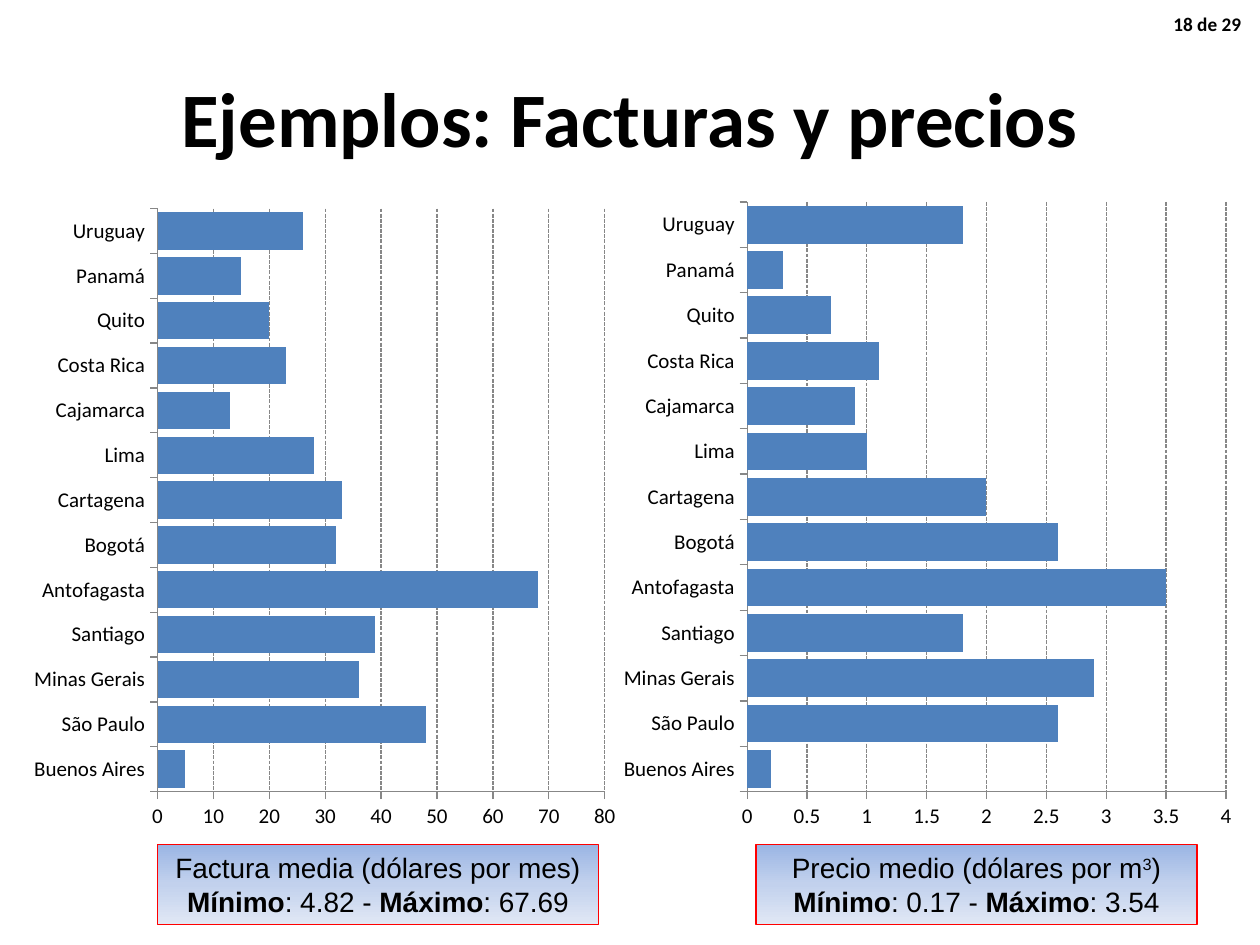
"""Build the slide that compares water bills and prices across Latin America."""
import copy

import pptx
import pptx.chart.data
import pptx.dml.color
import pptx.enum.chart
import pptx.enum.dml
import pptx.enum.shapes
import pptx.enum.text
import pptx.oxml
import pptx.oxml.ns
import pptx.util

Pt = pptx.util.Pt
RGBColor = pptx.dml.color.RGBColor
Align = pptx.enum.text.PP_ALIGN
Anchor = pptx.enum.text.MSO_ANCHOR

BLACK = RGBColor(0x00, 0x00, 0x00)
RED = RGBColor(0xFF, 0x00, 0x00)
BLUE = RGBColor(0x4F, 0x81, 0xBD)
GRAY = RGBColor(0x87, 0x87, 0x87)
GRADIENT = [
    (0, RGBColor(0x9A, 0xB5, 0xE4)),
    (0.5, RGBColor(0xC2, 0xD1, 0xED)),
    (1, RGBColor(0xE1, 0xE8, 0xF5)),
]

PLACES = ["Buenos Aires", "São Paulo", "Minas Gerais", "Santiago", "Antofagasta",
          "Bogotá", "Cartagena", "Lima", "Cajamarca", "Costa Rica", "Quito",
          "Panamá", "Uruguay"]
BILLS = [5, 48, 36, 39, 68, 32, 33, 28, 13, 23, 20, 15, 26]
PRICES = [0.2, 2.6, 2.9, 1.8, 3.5, 2.6, 2, 1, 0.9, 1.1, 0.7, 0.3, 1.8]

BOLD = {"bold": True}


class SlideBuilder:
    """Holds the style and the current slide."""

    def __init__(self, deck):
        self.page = deck.slides.add_slide(deck.slide_layouts[6])
        self.label_font = {"name": "Calibri", "size": Pt(12)}

    def apply(self, target, values):
        for name, value in values.items():
            setattr(target, name, value)

    def fill_text(self, shape, paragraphs, align, font, frame_format):
        frame = shape.text_frame
        self.apply(frame, {"word_wrap": True, **frame_format})
        for index, spans in enumerate(paragraphs):
            para = frame.paragraphs[0] if index == 0 else frame.add_paragraph()
            para.alignment = align
            for text, extra in spans:
                span = para.add_run()
                span.text = text
                span.font.color.rgb = BLACK
                values = {**font, **extra}
                baseline = values.pop("baseline", None)
                self.apply(span.font, values)
                if baseline:
                    span._r.get_or_add_rPr().set("baseline", baseline)

    def text(self, area, text, align, font, **frame_format):
        box = self.page.shapes.add_textbox(*map(Pt, area))
        self.fill_text(box, [[(text, {})]], align, font, frame_format)

    def caption(self, area, paragraphs):
        box = self.page.shapes.add_shape(
            pptx.enum.shapes.MSO_SHAPE.RECTANGLE, *map(Pt, area))
        box.shadow.inherit = False
        box.line.color.rgb = RED
        box.line.width = Pt(0.75)
        box.fill.gradient()
        box.fill.gradient_angle = 270
        stops = box._element.spPr.find(".//" + pptx.oxml.ns.qn("a:gsLst"))
        stops.append(copy.deepcopy(stops[0]))
        for stop, (position, color) in zip(box.fill.gradient_stops, GRADIENT):
            stop.position = position
            stop.color.rgb = color
        self.fill_text(box, paragraphs, Align.CENTER,
                       {"name": "Arial", "size": Pt(16)},
                       {"vertical_anchor": Anchor.MIDDLE,
                        "auto_size": pptx.enum.text.MSO_AUTO_SIZE.SHAPE_TO_FIT_TEXT})

    def bars(self, area, values, maximum, step, plot):
        data = pptx.chart.data.CategoryChartData()
        data.categories = PLACES
        data.add_series("Series 1", values)
        chart = self.page.shapes.add_chart(
            pptx.enum.chart.XL_CHART_TYPE.BAR_CLUSTERED, *map(Pt, area), data).chart
        self.apply(chart, {"has_legend": False, "has_title": False})
        self.apply(chart.font, self.label_font)
        chart.font.color.rgb = BLACK
        self.apply(chart.plots[0],
                   {"gap_width": 20, "overlap": 20, "vary_by_categories": False})
        series = chart.plots[0].series[0]
        series.invert_if_negative = False
        series.format.fill.solid()
        series.format.fill.fore_color.rgb = BLUE
        self.apply(chart.value_axis, {"minimum_scale": 0, "maximum_scale": maximum,
                                      "major_unit": step, "has_major_gridlines": True})
        for axis in (chart.category_axis, chart.value_axis):
            axis.major_tick_mark = pptx.enum.chart.XL_TICK_MARK.OUTSIDE
            axis.format.line.color.rgb = GRAY
            self.apply(axis.tick_labels.font, self.label_font)
        grid = chart.value_axis.major_gridlines.format.line
        grid.color.rgb = GRAY
        self.apply(grid, {"width": Pt(0.75),
                          "dash_style": pptx.enum.dml.MSO_LINE.SQUARE_DOT})
        self.place_plot(chart, plot)

    def place_plot(self, chart, plot):
        qn = pptx.oxml.ns.qn
        plot_area = chart._chartSpace.find(".//" + qn("c:plotArea"))
        for layout in plot_area.findall(qn("c:layout")):
            plot_area.remove(layout)
        parts = [("layoutTarget", "inner"), ("xMode", "edge"), ("yMode", "edge"),
                 *zip("xywh", plot)]
        inner = "".join(f'<c:{name} val="{value}"/>' for name, value in parts)
        plot_area.insert(0, pptx.oxml.parse_xml(
            f'<c:layout {pptx.oxml.ns.nsdecls("c")}>'
            f'<c:manualLayout>{inner}</c:manualLayout></c:layout>'))


def limits(low, high):
    return [("Mínimo", BOLD), (f": {low} - ", {}), ("Máximo", BOLD), (f": {high}", {})]


def main():
    deck = pptx.Presentation()
    deck.slide_width, deck.slide_height = Pt(720), Pt(540)
    builder = SlideBuilder(deck)
    builder.text((36, 21.6, 648, 90), "Ejemplos: Facturas y precios", Align.CENTER,
                 {"name": "Calibri", "size": Pt(44), **BOLD},
                 vertical_anchor=Anchor.MIDDLE)
    builder.bars((0, 108, 360, 374.4), BILLS, 80, 10, (0.25, 0.03, 0.71, 0.89))
    builder.bars((347.76, 108, 360, 374.4), PRICES, 4, 0.5, (0.22, 0.02, 0.76, 0.9))
    builder.caption((90, 482.4, 252, 46), [
        [("Factura media (dólares por mes)", {})], limits("4.82", "67.69")])
    builder.caption((432, 482.4, 252, 46), [
        [("Precio medio (dólares por m", {}), ("3", {"baseline": "30000"}), (")", {})],
        limits("0.17", "3.54")])
    builder.text((662.4, 3.6, 54, 21), "18 de 29", Align.RIGHT,
                 {"name": "Calibri", "size": Pt(11), **BOLD}, margin_left=0)
    deck.save("out.pptx")


if __name__ == "__main__":
    main()
